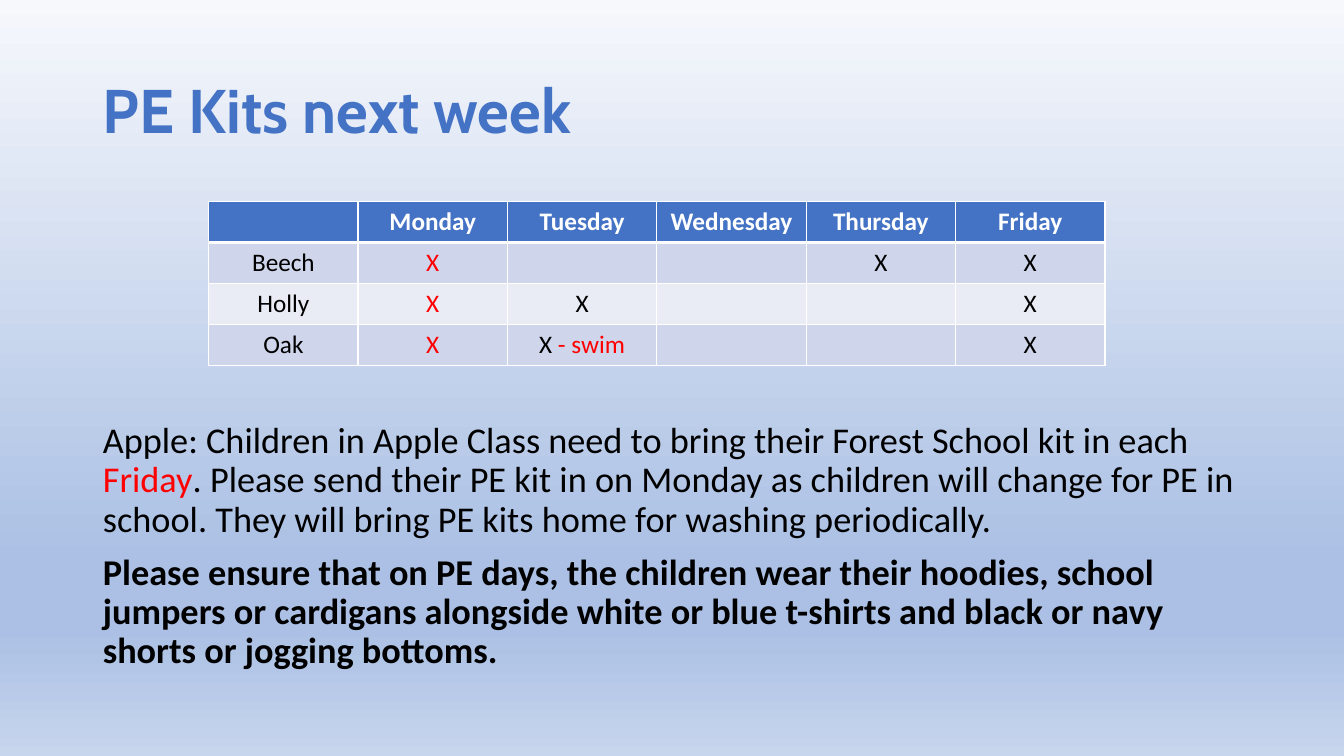
from pptx import Presentation
from pptx.dml.color import RGBColor
from pptx.enum.text import MSO_ANCHOR, MSO_AUTO_SIZE, PP_ALIGN
from pptx.oxml.ns import qn
from pptx.util import Inches, Pt
from lxml.etree import SubElement

BLUE = RGBColor(0x44, 0x72, 0xC4)
BLACK = RGBColor(0, 0, 0)
RED = RGBColor(0xFF, 0, 0)
WHITE = RGBColor(0xFF, 0xFF, 0xFF)
DARK = RGBColor(0xCF, 0xD5, 0xEA)
LIGHT = RGBColor(0xE9, 0xEB, 0xF5)
PALE = RGBColor(0xF6, 0xF8, 0xFC)
SKY = RGBColor(0xAB, 0xC0, 0xE4)
MIST = RGBColor(0xC7, 0xD5, 0xED)

STOPS = [(0, PALE), (74, SKY), (83, SKY), (100, MIST)]
DAYS = ["", "Monday", "Tuesday", "Wednesday", "Thursday", "Friday"]
KITS = [
    ["Beech", "X", "", "", "X", "X"],
    ["Holly", "X", "X", "", "", "X"],
    ["Oak", "X", [("X ", BLACK), ("- swim", RED)], "", "", "X"],
]
NOTES = [
    ([("Apple: Children in Apple Class need to bring their Forest School kit in each ", BLACK),
      ("Friday", RED),
      (". Please send their PE kit in on Monday as children will change for PE in school. "
       "They will bring PE kits home for washing periodically.", BLACK)], False),
    ([("Please ensure that on PE days, the children wear their hoodies, school jumpers or "
       "cardigans alongside white or blue t-shirts and black or navy shorts or jogging "
       "bottoms.", BLACK)], True),
]


class Deck:
    def __init__(self, slide, font="Calibri"):
        self.slide = slide
        self.font = font

    def paint(self, stops):
        """Fill the background with a gradient from top to bottom."""
        fill = self.slide.background.fill
        fill.gradient()
        fill.gradient_angle = 270
        box = self.slide.element.find(".//" + qn("a:gsLst"))
        box.clear()
        for pos, color in stops:
            stop = SubElement(box, qn("a:gs"), pos=str(pos * 1000))
            SubElement(stop, qn("a:srgbClr"), val=str(color))

    def place(self, shape, left, top, width, height, anchor):
        shape.left, shape.top = Inches(left), Inches(top)
        shape.width, shape.height = Inches(width), Inches(height)
        frame = shape.text_frame
        frame.word_wrap = True
        frame.auto_size = MSO_AUTO_SIZE.NONE
        frame.vertical_anchor = anchor
        return frame

    def add_runs(self, para, parts, size, bold=False, font=None):
        for text, color in parts:
            run = para.add_run()
            run.text = text
            run.font.name = font or self.font
            run.font.size = Pt(size)
            run.font.bold = bold
            run.font.color.rgb = color

    def title(self, text):
        frame = self.place(self.slide.shapes.title, 0.92, 0.4, 11.5, 1.45, MSO_ANCHOR.MIDDLE)
        para = frame.paragraphs[0]
        para.alignment = PP_ALIGN.LEFT
        para.line_spacing = 0.9
        self.add_runs(para, [(text, BLUE)], 44, True, "Cabin")

    def body(self, notes):
        frame = self.place(self.slide.placeholders[1], 0.92, 4.14, 11.5, 2.62, MSO_ANCHOR.TOP)
        for i, (parts, bold) in enumerate(notes):
            para = frame.add_paragraph() if i else frame.paragraphs[0]
            props = para._p.get_or_add_pPr()
            props.set("marL", "0")
            props.set("indent", "0")
            SubElement(props, qn("a:buNone"))
            para.line_spacing = 0.9
            para.space_before = Pt(10 if i else 0)
            self.add_runs(para, parts, 25.9, bold)

    def edge(self, cell, top, bottom):
        """Draw white cell borders; top and bottom are widths in points."""
        props = cell._tc.get_or_add_tcPr()
        for side, width in zip("LRTB", (1, 1, top, bottom)):
            line = SubElement(props, qn("a:ln" + side), w=str(Pt(width)))
            fill = SubElement(line, qn("a:solidFill"))
            SubElement(fill, qn("a:srgbClr"), val=str(WHITE))

    def table(self, rows):
        grid = self.slide.shapes.add_table(
            len(rows), len(rows[0]), Inches(2.07), Inches(2), Inches(8.89), Inches(1.62)).table
        for r, row in enumerate(rows):
            back = DARK if r % 2 else LIGHT
            for c, value in enumerate(row):
                cell = grid.cell(r, c)
                self.edge(cell, 3 if r == 1 else 1, 1 if r else 3)
                cell.fill.solid()
                cell.fill.fore_color.rgb = back if r else BLUE
                color = WHITE if r == 0 else RED if c == 1 else BLACK
                parts = [(value, color)] if isinstance(value, str) else value
                para = cell.text_frame.paragraphs[0]
                para.alignment = PP_ALIGN.CENTER
                if value:
                    self.add_runs(para, parts, 18, r == 0)


def main():
    show = Presentation()
    show.slide_width, show.slide_height = Inches(13.33), Inches(7.5)
    deck = Deck(show.slides.add_slide(show.slide_layouts[1]))
    deck.paint(STOPS)
    deck.body(NOTES)
    deck.title("PE Kits next week")
    deck.table([DAYS] + KITS)
    show.save("out.pptx")


if __name__ == "__main__":
    main()
